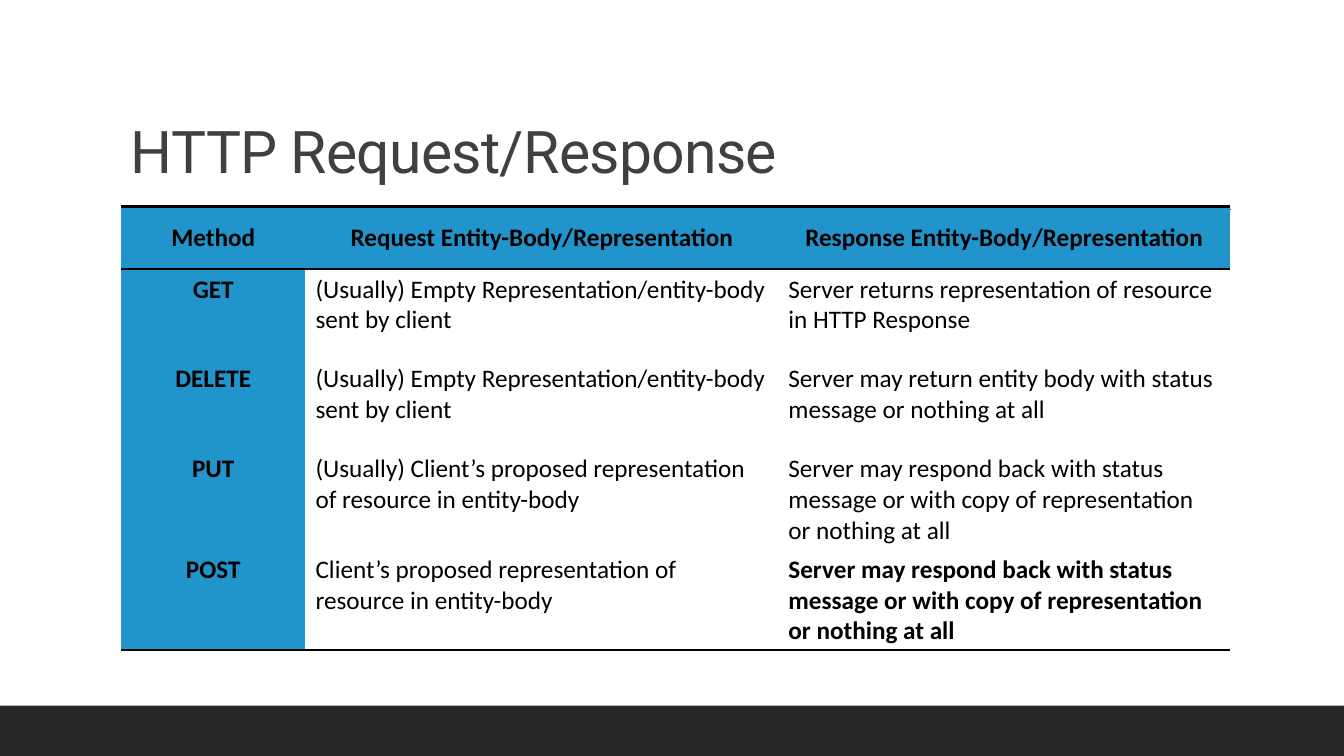
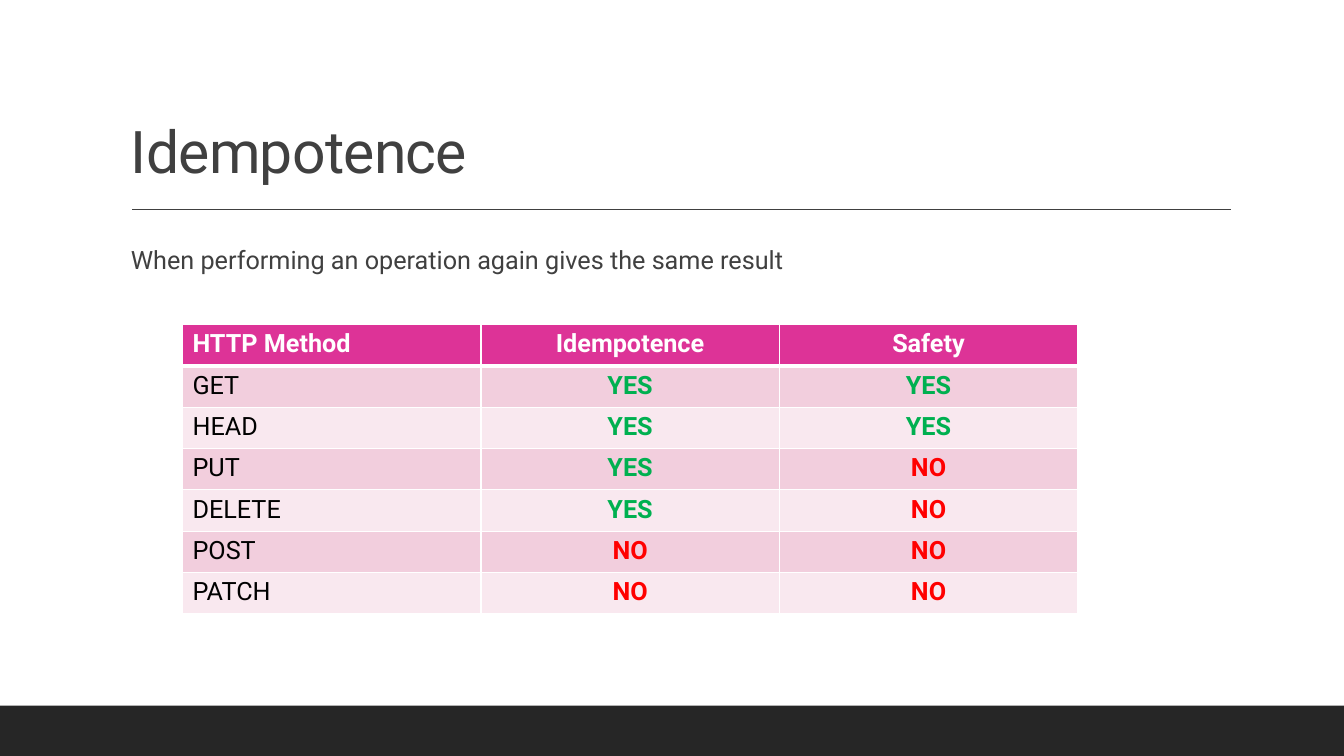
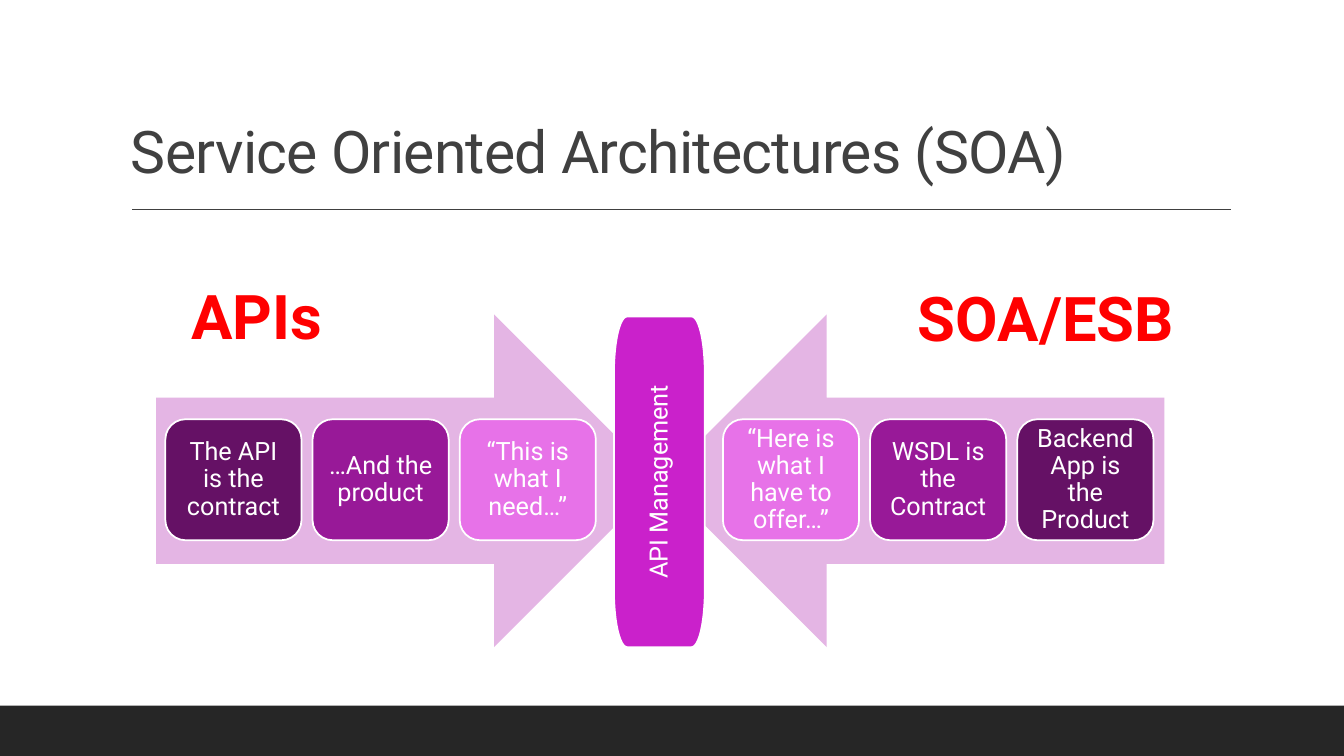
from math import cos, pi, sin

from lxml import etree
from pptx import Presentation
from pptx.dml.color import RGBColor
from pptx.enum.shapes import MSO_CONNECTOR, MSO_SHAPE
from pptx.enum.text import MSO_ANCHOR, PP_ALIGN
from pptx.oxml.ns import qn
from pptx.util import Inches, Pt

WHITE = RGBColor(0xFF, 0xFF, 0xFF)
BLACK = RGBColor(0x00, 0x00, 0x00)
BAND = RGBColor(0x26, 0x26, 0x26)
GRAY = RGBColor(0x40, 0x40, 0x40)
BLUE = RGBColor(0x21, 0x94, 0xCB)
PINK = RGBColor(0xDD, 0x33, 0x97)
PINK_MID = RGBColor(0xF2, 0xCE, 0xDD)
PINK_PALE = RGBColor(0xF9, 0xE8, 0xEF)
GREEN = RGBColor(0x00, 0xB0, 0x50)
RED = RGBColor(0xFF, 0x00, 0x00)
LILAC = RGBColor(0xE4, 0xB5, 0xE4)
PLUM = RGBColor(0x65, 0x11, 0x65)
PURPLE = RGBColor(0x98, 0x19, 0x98)
ORCHID = RGBColor(0xE7, 0x72, 0xE8)
MAGENTA = RGBColor(0xCA, 0x21, 0xCB)

FONT = "Roboto"
TABLE_FONT = "Calibri"
NO_STYLE = "{2D5ABB26-0587-4C30-8999-92F81FD0307C}"

EMPTY_REQUEST = "(Usually) Empty Representation/entity-body sent by client"
STATUS_OR_COPY = ("Server may respond back with status message or with copy of "
                  "representation or nothing at all")
BODIES = [
    ("Method", "Request Entity-Body/Representation", "Response Entity-Body/Representation"),
    ("GET", EMPTY_REQUEST, "Server returns representation of resource in HTTP Response"),
    ("DELETE", EMPTY_REQUEST,
     "Server may return entity body with status message or nothing at all"),
    ("PUT", "(Usually) Client’s proposed representation of resource in entity-body",
     STATUS_OR_COPY),
    ("POST", "Client’s proposed representation of resource in entity-body", STATUS_OR_COPY),
]
BOLD_ANSWER = (4, 2)

IDEMPOTENCE = [
    ("HTTP Method", "Idempotence", "Safety"),
    ("GET", "YES", "YES"),
    ("HEAD", "YES", "YES"),
    ("PUT", "YES", "NO"),
    ("DELETE", "YES", "NO"),
    ("POST", "NO", "NO"),
    ("PATCH", "NO", "NO"),
]
ANSWER_COLORS = {"YES": GREEN, "NO": RED}

SIDES = [
    (MSO_SHAPE.RIGHT_ARROW, 1.55, 1.64, [
        ("The API is the contract", PLUM),
        ("…And the product", PURPLE),
        ("“This is what I need…”", ORCHID)]),
    (MSO_SHAPE.LEFT_ARROW, 6.55, 7.17, [
        ("“Here is what I have to offer…”", ORCHID),
        ("WSDL is the Contract", PURPLE),
        ("Backend App is the Product", PLUM)]),
]
LABELS = [("APIs", 1.63, 2.71, 1.84), ("SOA/ESB", 8.88, 2.73, 2.99)]


def set_text(tf, text, size=18, color=WHITE, bold=False, font=FONT, align=PP_ALIGN.LEFT):
    tf.text = text
    tf.word_wrap = True
    p = tf.paragraphs[0]
    p.alignment = align
    r = p.runs[0]
    r.font.size = Pt(size)
    r.font.name = font
    r.font.bold = bold
    r.font.color.rgb = color
    return p


def add_text(s, x, y, w, h, text, **style):
    tf = s.shapes.add_textbox(Inches(x), Inches(y), Inches(w), Inches(h)).text_frame
    return tf, set_text(tf, text, **style)


def paint(sp, fill, line=None):
    sp.shadow.inherit = False
    sp.fill.solid()
    sp.fill.fore_color.rgb = fill
    if line is None:
        sp.line.fill.background()
    else:
        sp.line.color.rgb = line
        sp.line.width = Pt(1.25)


def add_slide(prs, title):
    s = prs.slides.add_slide(prs.slide_layouts[6])
    band = s.shapes.add_shape(MSO_SHAPE.RECTANGLE, 0, Inches(7), prs.slide_width, Inches(0.5))
    paint(band, BAND)
    rule = s.shapes.add_connector(MSO_CONNECTOR.STRAIGHT, Inches(1.31), Inches(2.08),
                                  Inches(12.21), Inches(2.08))
    rule.line.color.rgb = GRAY
    rule.line.width = Pt(1)
    etree.SubElement(rule._element.spPr, qn("a:effectLst"))
    tf, p = add_text(s, 1.2, 0.31, 11, 1.59, title, size=42, color=GRAY)
    tf.vertical_anchor = MSO_ANCHOR.BOTTOM
    p.line_spacing = 0.9
    p.runs[0]._r.get_or_add_rPr().set("spc", "-50")
    return s


def add_table(s, rows, x, y, widths, heights):
    table = s.shapes.add_table(len(rows), len(widths), Inches(x), Inches(y),
                               Inches(sum(widths)), Inches(sum(heights))).table
    table._tbl.tblPr.find(qn("a:tableStyleId")).text = NO_STYLE
    table.horz_banding = False
    for col, w in zip(table.columns, widths):
        col.width = Inches(w)
    for row, h in zip(table.rows, heights):
        row.height = Inches(h)
    return table


def fill_cell(cell, fill, borders):
    cell.fill.solid()
    cell.fill.fore_color.rgb = fill
    tcPr = cell._tc.get_or_add_tcPr()
    for i, (side, color, width) in enumerate(borders):
        ln = etree.Element(qn("a:ln" + side), w=str(Pt(width)))
        solid = etree.SubElement(ln, qn("a:solidFill"))
        etree.SubElement(solid, qn("a:srgbClr"), val=str(color))
        tcPr.insert(i, ln)


def add_bodies_slide(prs):
    s = add_slide(prs, "HTTP Request/Response")
    table = add_table(s, BODIES, 1.2, 2.05, [1.83, 4.69, 4.48], [0.62] + [0.89] * 4)
    for i, row in enumerate(BODIES):
        edges = {0: "TB", len(BODIES) - 1: "B"}.get(i, "")
        for j, text in enumerate(row):
            cell = table.cell(i, j)
            head = i == 0 or j == 0
            set_text(cell.text_frame, text, color=BLACK, font=TABLE_FONT,
                     bold=head or (i, j) == BOLD_ANSWER,
                     align=PP_ALIGN.CENTER if head else PP_ALIGN.LEFT)
            if i == 0:
                cell.vertical_anchor = MSO_ANCHOR.MIDDLE
            fill_cell(cell, BLUE if head else WHITE, [(e, BLACK, 2) for e in edges])


def add_idempotence_slide(prs):
    s = add_slide(prs, "Idempotence")
    tf, p = add_text(s, 1.2, 2.31, 11, 4.11,
                     "When performing an operation again gives the same result", color=GRAY)
    p.line_spacing = 1.2
    p.space_before = Pt(12)
    p.space_after = Pt(2)
    table = add_table(s, IDEMPOTENCE, 1.81, 3.22, [2.96] * 3, [0.41] * len(IDEMPOTENCE))
    for i, row in enumerate(IDEMPOTENCE):
        fill = PINK if i == 0 else PINK_MID if i % 2 else PINK_PALE
        for j, text in enumerate(row):
            cell = table.cell(i, j)
            color = WHITE if i == 0 else ANSWER_COLORS.get(text, BLACK)
            set_text(cell.text_frame, text, color=color, bold=i == 0 or j > 0,
                     align=PP_ALIGN.CENTER if j else PP_ALIGN.LEFT)
            fill_cell(cell, fill, [("L", WHITE, 1), ("R", WHITE, 1),
                                   ("T", WHITE, 3 if i == 1 else 1),
                                   ("B", WHITE, 3 if i == 0 else 1)])


def label_box(sp, text, fill):
    paint(sp, fill, WHITE)
    tf = sp.text_frame
    tf.margin_left = tf.margin_right = tf.margin_top = tf.margin_bottom = Inches(0.16)
    tf.vertical_anchor = MSO_ANCHOR.MIDDLE
    set_text(tf, text, align=PP_ALIGN.CENTER).line_spacing = 0.9


def add_pill(s, x, y, w, h, rx, ry, steps=12):
    corners = [(x + w - rx, y + h - ry), (x + rx, y + h - ry),
               (x + rx, y + ry), (x + w - rx, y + ry)]
    points = []
    for quarter, (cx, cy) in enumerate(corners):
        for k in range(steps + 1):
            a = (quarter + k / steps) * pi / 2
            points.append((Inches(cx + rx * cos(a)), Inches(cy + ry * sin(a))))
    builder = s.shapes.build_freeform(*points[0])
    builder.add_line_segments(points[1:], close=True)
    return builder.convert_to_shape()


def add_soa_slide(prs):
    s = add_slide(prs, "Service Oriented Architectures (SOA)")
    box_w, box_h, gap, radius = 1.35, 1.2, 0.11, 0.2
    for arrow_kind, arrow_x, first_x, boxes in SIDES:
        arrow = s.shapes.add_shape(arrow_kind, Inches(arrow_x), Inches(3.12),
                                   Inches(5), Inches(3.3))
        paint(arrow, LILAC)
        for i, (text, fill) in enumerate(boxes):
            box = s.shapes.add_shape(MSO_SHAPE.ROUNDED_RECTANGLE,
                                     Inches(first_x + i * (box_w + gap)), Inches(4.16),
                                     Inches(box_w), Inches(box_h))
            box.adjustments[0] = radius / box_h
            label_box(box, text, fill)
            tf = box.text_frame
            tf.margin_left = tf.margin_right = tf.margin_top = tf.margin_bottom = Inches(0.1)
    pill = add_pill(s, 6.09, 3.14, 0.9, 3.28, 0.13, 0.55)
    label_box(pill, "API Management", MAGENTA)
    pill.text_frame._txBody.bodyPr.set("vert", "vert270")
    for text, x, y, w in LABELS:
        add_text(s, x, y, w, 0.84, text, size=44, color=RED, bold=True, align=PP_ALIGN.CENTER)


def main():
    prs = Presentation()
    prs.slide_width = Inches(13.33)
    prs.slide_height = Inches(7.5)
    add_bodies_slide(prs)
    add_idempotence_slide(prs)
    add_soa_slide(prs)
    prs.save("out.pptx")


if __name__ == "__main__":
    main()
